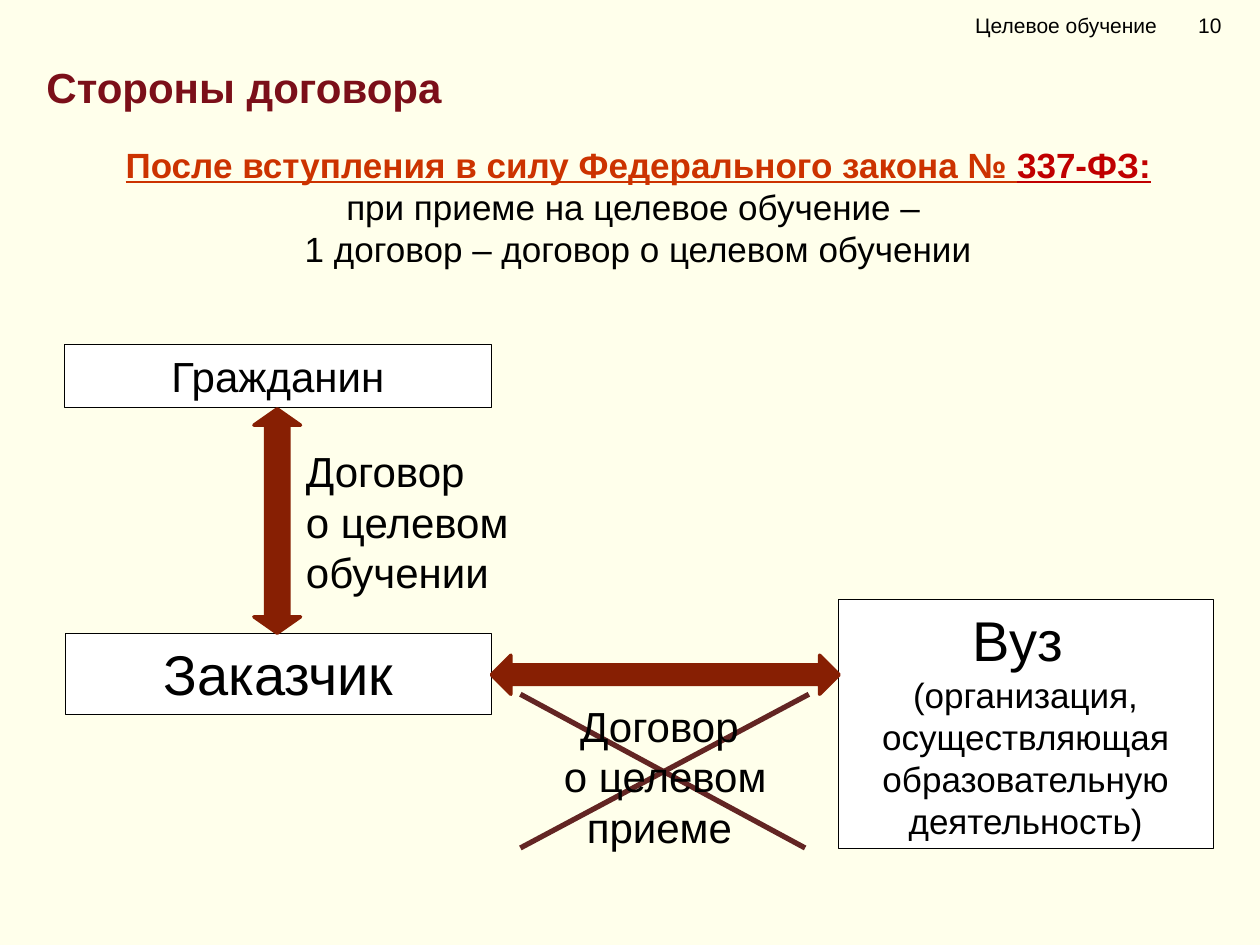
from pptx import Presentation
from pptx.dml.color import RGBColor
from pptx.enum.shapes import MSO_CONNECTOR, MSO_SHAPE
from pptx.enum.text import MSO_ANCHOR, PP_ALIGN
from pptx.oxml.ns import qn
from pptx.util import Inches, Pt
from lxml import etree

LEFT, CENTER = PP_ALIGN.LEFT, PP_ALIGN.CENTER
TOP, MIDDLE = MSO_ANCHOR.TOP, MSO_ANCHOR.MIDDLE
RECT, ARROW = MSO_SHAPE.RECTANGLE, MSO_SHAPE.LEFT_RIGHT_ARROW
STRAIGHT = MSO_CONNECTOR.STRAIGHT

FONT = "Arial"
COLORS = {
    "back": "FFFFEB", "text": "000000", "box": "FFFFFF", "title": "7B0F19",
    "lead": "CC3300", "law": "C00000", "arrow": "871F03", "cross": "632523",
}

# Content: a paragraph is a list of runs (text, size, colour, marks)
HEAD = [[("Целевое обучение\t10", 12, "text", "")]]
TITLE = [[("Стороны договора", 24, "title", "b")]]
INTRO = [
    [("После вступления в силу Федерального закона № ", 20, "lead", "bu"),
     ("337-ФЗ:", 20, "law", "bu")],
    [("при приеме на целевое обучение – ", 20, "text", "")],
    [("1 договор – договор о целевом обучении", 20, "text", "")],
]
STUDY = [[("Договор", 24, "text", "")],
         [("о целевом обучении", 24, "text", "")]]
ENTRY = [[("Договор ", 24, "text", "")],
         [("о целевом приеме ", 24, "text", "")]]

# Left, top, width, height
LABELS = [
    (TITLE, (0.27, 0.44, 9.29, 0.47), LEFT),
    (INTRO, (0.24, 1.09, 9.65, 1.11), CENTER),
    (STUDY, (2.33, 3.49, 3.22, 1.31), LEFT),
    (ENTRY, (3.9, 5.51, 2.76, 1.31), CENTER),
]
BOXES = [
    ([[("Гражданин", 24, "text", "")]], (0.51, 2.73, 3.39, 0.5)),
    ([[("Заказчик", 32, "text", "")]], (0.52, 5.03, 3.38, 0.64)),
    ([[("Вуз ", 32, "text", "")],
      [("(организация, осуществляющая образовательную деятельность)",
        20, "text", "")]], (6.65, 4.76, 2.98, 1.97)),
]
# Place, turn, adjustments
ARROWS = [
    ((1.31, 3.95, 1.78, 0.37), 90, (0.5, 0.35)),
    ((3.9, 5.2, 2.76, 0.31), 0, (0.5, 0.5)),
]
CROSS = [(4.13, 5.51, 6.39, 6.73), (4.13, 6.73, 6.42, 5.51)]


def color(name):
    return RGBColor.from_string(COLORS[name])


def inches(place):
    return [Inches(n) for n in place]


def write(shape, paras, align, anchor=TOP):
    frame = shape.text_frame
    frame.word_wrap = True
    frame.vertical_anchor = anchor
    for i, runs in enumerate(paras):
        para = frame.paragraphs[0] if i == 0 else frame.add_paragraph()
        para.alignment = align
        for text, size, tone, marks in runs:
            run = para.add_run()
            run.text = text
            font = run.font
            font.name, font.size = FONT, Pt(size)
            font.color.rgb = color(tone)
            font.bold, font.underline = "b" in marks, "u" in marks
    return frame


def draw(kind, place, fill, line, width):
    shape = slide.shapes.add_shape(kind, *inches(place))
    shape.shadow.inherit = False
    shape.fill.solid()
    shape.fill.fore_color.rgb = color(fill)
    shape.line.color.rgb = color(line)
    shape.line.width = Pt(width)
    return shape


deck = Presentation()
deck.slide_width, deck.slide_height = Inches(10), Inches(7.5)
slide = deck.slides.add_slide(deck.slide_layouts[6])
slide.background.fill.solid()
slide.background.fill.fore_color.rgb = color("back")

# Crossed-out contract
for x1, y1, x2, y2 in CROSS:
    line = slide.shapes.add_connector(STRAIGHT, *inches((x1, y1, x2, y2)))
    line.line.color.rgb = color("cross")
    line.line.width = Pt(3)
    etree.SubElement(line._element.spPr, qn("a:effectLst"))

# Parties
for paras, place in BOXES:
    write(draw(RECT, place, "box", "text", 0.25), paras, CENTER)

# Arrows between parties
for place, turn, adjust in ARROWS:
    arrow = draw(ARROW, place, "arrow", "arrow", 2)
    arrow.rotation = turn
    for i, value in enumerate(adjust):
        arrow.adjustments[i] = value

# Title, intro and contract labels
for paras, place, align in LABELS:
    write(slide.shapes.add_textbox(*inches(place)), paras, align)

# Header with the page number at a tab stop
head = slide.shapes.add_textbox(*inches((7.44, 0, 2.56, 0.4)))
frame = write(head, HEAD, LEFT, MIDDLE)
frame.margin_left = Inches(0.3)
tabs = etree.SubElement(frame.paragraphs[0]._p.get_or_add_pPr(), qn("a:tabLst"))
etree.SubElement(tabs, qn("a:tab"), pos=str(Inches(1.77)), algn="l")

deck.save("out.pptx")
